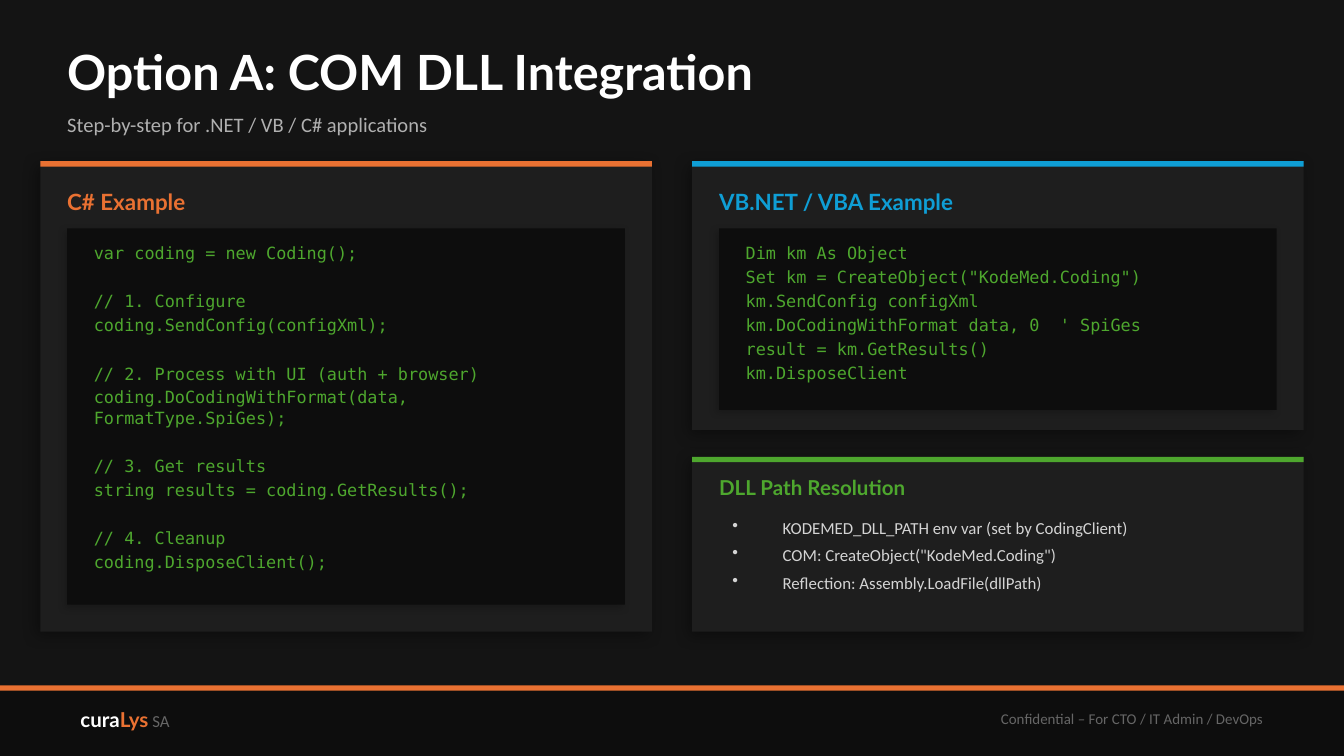
from lxml import etree
from pptx import Presentation
from pptx import util as u
from pptx.dml.color import RGBColor
from pptx.enum import shapes, text
from pptx.oxml.ns import qn

PX = u.Inches(1) // 200
WIDTH, HEIGHT = 2000, 1125

BACKGROUND = RGBColor(0x14, 0x14, 0x14)
PANEL = RGBColor(0x1E, 0x1E, 0x1E)
DARK = RGBColor(0x0D, 0x0D, 0x0D)
ORANGE = RGBColor(0xE9, 0x71, 0x32)
BLUE = RGBColor(0x0F, 0x9E, 0xD5)
GREEN = RGBColor(0x4E, 0xA7, 0x2E)
WHITE = RGBColor(0xFF, 0xFF, 0xFF)
SILVER = RGBColor(0xB0, 0xB0, 0xB0)
LIGHT = RGBColor(0xD4, 0xD4, 0xD4)
GRAY = RGBColor(0x66, 0x66, 0x66)

HEADING, BODY, CODE = "Lato", "Calibri", "DejaVu Sans Mono"
BAR = 8
PANEL_WIDTH, PADDING = 910, 40
LEFT, RIGHT = 60, 1030
INNER_WIDTH = PANEL_WIDTH - 2 * PADDING
CODE_GAP = 12.9  # points, one empty line of code

TITLE = "Option A: COM DLL Integration"
SUBTITLE = "Step-by-step for .NET / VB / C# applications"
CONFIDENTIAL = "Confidential – For CTO / IT Admin / DevOps"
BRAND = [
    ("cura", dict(size=11, font=HEADING, color=WHITE, bold=True)),
    ("Lys", dict(size=11, font=HEADING, color=ORANGE, bold=True)),
    (" SA", dict(size=9, font=BODY, color=GRAY)),
]

# Code is a list of blocks; each block is a list of lines.
CODE_PANELS = [
    dict(title="C# Example", color=ORANGE, left=LEFT, height=700, code_height=560, blocks=[
        ["var coding = new Coding();"],
        ["// 1. Configure", "coding.SendConfig(configXml);"],
        ["// 2. Process with UI (auth + browser)",
         "coding.DoCodingWithFormat(data, FormatType.SpiGes);"],
        ["// 3. Get results", "string results = coding.GetResults();"],
        ["// 4. Cleanup", "coding.DisposeClient();"],
    ]),
    dict(title="VB.NET / VBA Example", color=BLUE, left=RIGHT, height=400, code_height=270, blocks=[
        ["Dim km As Object",
         'Set km = CreateObject("KodeMed.Coding")',
         "km.SendConfig configXml",
         "km.DoCodingWithFormat data, 0  ' SpiGes",
         "result = km.GetResults()",
         "km.DisposeClient"],
    ]),
]
PATH_TITLE = "DLL Path Resolution"
PATH_ITEMS = [
    "KODEMED_DLL_PATH env var (set by CodingClient)",
    'COM: CreateObject("KodeMed.Coding")',
    "Reflection: Assembly.LoadFile(dllPath)",
]


def add_shadow(shape, opacity, blur, distance):
    """Add a black outer shadow; opacity in percent, lengths in points."""
    effects = shape._element.spPr.find(qn("a:effectLst"))
    shadow = etree.SubElement(
        effects, qn("a:outerShdw"), blurRad=str(u.Pt(blur)), dist=str(u.Pt(distance)),
        dir=str(135 * 60000), algn="bl", rotWithShape="0")
    color = etree.SubElement(shadow, qn("a:srgbClr"), val="000000")
    etree.SubElement(color, qn("a:alpha"), val=str(opacity * 1000))


def add_rectangle(slide, left, top, width, height, color, shadow=None):
    shape = slide.shapes.add_shape(
        shapes.MSO_SHAPE.RECTANGLE, left * PX, top * PX, width * PX, height * PX)
    shape.fill.solid()
    shape.fill.fore_color.rgb = color
    shape.line.fill.background()
    shape.shadow.inherit = False
    if shadow:
        add_shadow(shape, *shadow)


def add_bullet(paragraph, indent):
    properties = paragraph._p.get_or_add_pPr()
    properties.set("marL", str(indent * PX))
    properties.set("indent", str(-indent * PX))
    etree.SubElement(properties, qn("a:buChar"), char="•")


def add_text(slide, left, top, width, height, paragraphs, *, size=9, font=BODY, color=WHITE,
             bold=False, align=None, middle=True, inset=True, after=None, gaps=None, bullet=None):
    """Each paragraph is a string or a list of (string, format) runs.

    gaps maps a paragraph's index to its space before, in points.
    """
    box = slide.shapes.add_textbox(left * PX, top * PX, width * PX, height * PX)
    frame = box.text_frame
    frame.word_wrap = True
    frame.vertical_anchor = text.MSO_ANCHOR.MIDDLE if middle else text.MSO_ANCHOR.TOP
    if not inset:
        frame.margin_left = frame.margin_right = frame.margin_top = frame.margin_bottom = 0
    default = dict(size=size, font=font, color=color, bold=bold)
    for index, runs in enumerate(paragraphs):
        paragraph = frame.add_paragraph() if index else frame.paragraphs[0]
        if bullet:
            add_bullet(paragraph, bullet)
        if align is not None:
            paragraph.alignment = align
        if after is not None:
            paragraph.space_after = u.Pt(after)
        if gaps and index in gaps:
            paragraph.space_before = u.Pt(gaps[index])
        for words, changes in [(runs, {})] if isinstance(runs, str) else runs:
            style = {**default, "bold": False, **changes} if changes else default
            run = paragraph.add_run()
            run.text = words
            run.font.size = u.Pt(style["size"])
            run.font.name = style["font"]
            run.font.bold = style["bold"]
            run.font.color.rgb = style["color"]


def add_panel(slide, left, top, height, color):
    add_rectangle(slide, left, top, PANEL_WIDTH, height, PANEL, shadow=(35, 8, 3))
    add_rectangle(slide, left, top, PANEL_WIDTH, BAR, color)


def add_code_panel(slide, title, color, left, height, code_height, blocks, top=240):
    add_panel(slide, left, top, height, color)
    inner = left + PADDING
    add_text(slide, inner, top + 30, INNER_WIDTH, 60, [title],
             size=12, font=HEADING, color=color, bold=True, inset=False)
    add_rectangle(slide, inner, top + 100, INNER_WIDTH, code_height, DARK, shadow=(20, 4, 2))
    lines, gaps = [], {}
    for block in blocks:
        if lines:
            gaps[len(lines)] = CODE_GAP
        lines += block
    add_text(slide, inner + 20, top + 112, INNER_WIDTH - 40, code_height - 24, lines,
             font=CODE, color=GREEN, middle=False, after=2, gaps=gaps)


def add_path_panel(slide, top=680):
    add_panel(slide, RIGHT, top, 260, GREEN)
    inner = RIGHT + PADDING
    add_text(slide, inner, top + 20, INNER_WIDTH, 50, [PATH_TITLE],
             size=11, font=HEADING, color=GREEN, bold=True, inset=False)
    add_text(slide, inner, top + 80, INNER_WIDTH, 160, PATH_ITEMS,
             color=LIGHT, middle=False, after=4, bullet=75)


def add_footer(slide, top=1020):
    add_rectangle(slide, 0, top, WIDTH, HEIGHT - top, DARK)
    add_rectangle(slide, 0, top, WIDTH, BAR, ORANGE)
    add_text(slide, 100, top + 10, 600, 80, [BRAND])
    add_text(slide, 1100, top + 10, 800, 80, [CONFIDENTIAL],
             size=8, color=GRAY, align=text.PP_ALIGN.RIGHT)


def main():
    presentation = Presentation()
    presentation.slide_width, presentation.slide_height = WIDTH * PX, HEIGHT * PX
    slide = presentation.slides.add_slide(presentation.slide_layouts[6])
    slide.background.fill.solid()
    slide.background.fill.fore_color.rgb = BACKGROUND

    add_footer(slide)
    add_text(slide, 100, 50, 1800, 110, [TITLE], size=26, font=HEADING, bold=True, inset=False)
    add_text(slide, 100, 150, 1800, 70, [SUBTITLE], size=11, color=SILVER, inset=False)
    for panel in CODE_PANELS:
        add_code_panel(slide, **panel)
    add_path_panel(slide)
    presentation.save("out.pptx")


if __name__ == "__main__":
    main()
